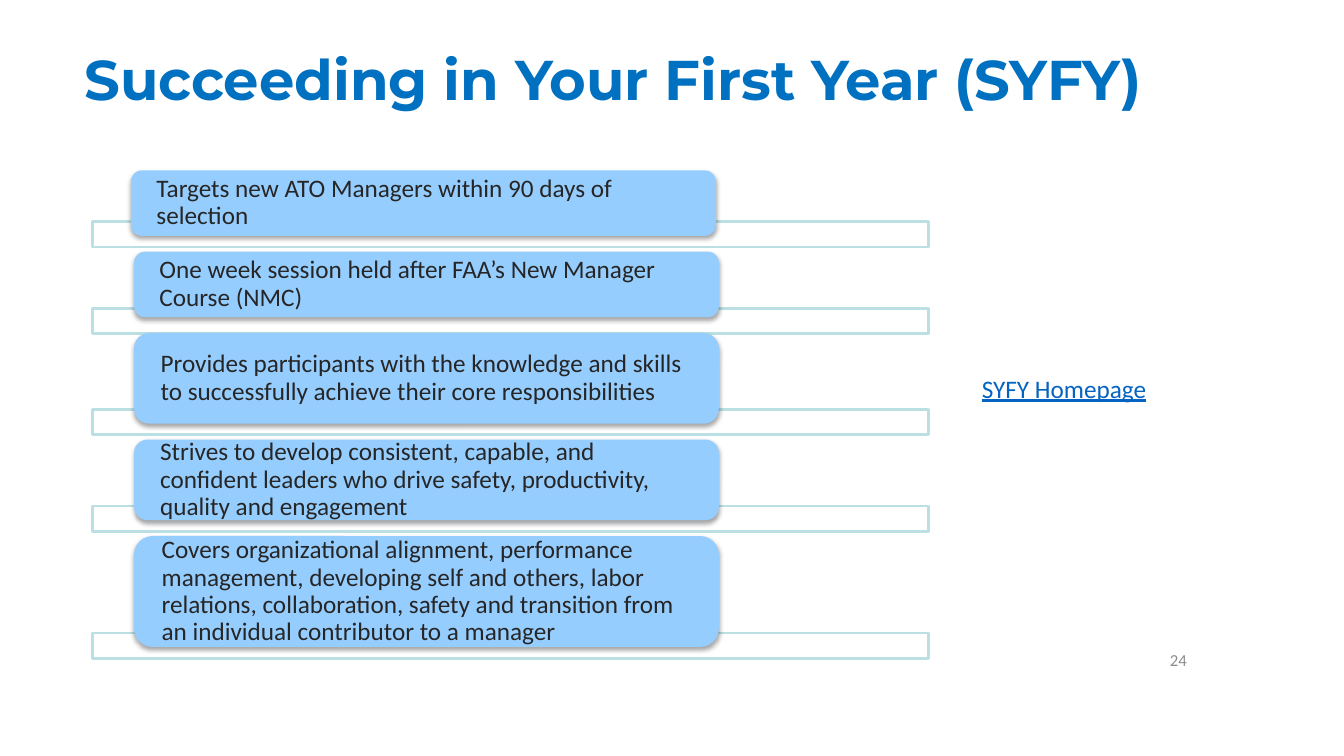
from dataclasses import dataclass

from lxml.etree import SubElement
from pptx import Presentation
from pptx.dml.color import RGBColor
from pptx.enum.shapes import MSO_SHAPE
from pptx.enum.text import MSO_ANCHOR, PP_ALIGN
from pptx.oxml.ns import qn
from pptx.shapes.autoshape import Shape
from pptx.slide import Slide
from pptx.util import Inches, Length, Pt

CELL = 0.1
CARD_TOP = 16.9
CARD_GAP = 1.57
CARD_WIDTH = 58
BAR_LEFT = 9.2
BAR_WIDTH = 82.9
BAR_HEIGHT = 2.5


@dataclass(frozen=True)
class Area:
    column: float
    row: float
    columns: float
    rows: float


@dataclass(frozen=True)
class Point:
    words: str
    rows: float
    bar_row: float
    column: float = 13.3


@dataclass(frozen=True)
class Label:
    words: str
    area: Area
    size: float
    color: str
    font: str = "Calibri"
    bold: bool = False
    underline: bool = False
    spacing: float = 1.0
    anchor: MSO_ANCHOR = MSO_ANCHOR.MIDDLE
    align: PP_ALIGN = PP_ALIGN.LEFT


POINTS = [
    Point("Targets new ATO Managers within 90 days of selection", 6.5, 22, 13),
    Point("One week session held after FAA’s New Manager Course (NMC)", 6.5, 30.6),
    Point("Provides participants with the knowledge and skills to successfully "
          "achieve their core responsibilities", 9, 40.6),
    Point("Strives to develop consistent, capable, and confident leaders who drive "
          "safety, productivity, quality and engagement", 8, 50.2),
    Point("Covers organizational alignment, performance management, developing self "
          "and others, labor relations, collaboration, safety and transition from "
          "an individual contributor to a manager", 11, 62.8),
]

LABELS = [
    Label("Succeeding in Your First Year (SYFY)", Area(7.4, 4, 115, 8.3), 40, "0070C0",
          font="Montserrat", bold=True, spacing=0.9),
    Label("SYFY Homepage", Area(96.4, 36.5, 18.4, 4), 18, "0563C1",
          underline=True, anchor=MSO_ANCHOR.TOP),
    Label("24", Area(94.2, 63.5, 24.5, 4), 12, "8C8C8C", align=PP_ALIGN.RIGHT),
]


def color(value: str) -> RGBColor:
    return RGBColor.from_string(value)


def place(area: Area) -> list[Length]:
    return [Inches(cells * CELL) for cells in (area.column, area.row, area.columns, area.rows)]


def write(box: Shape, label: Label) -> None:
    frame = box.text_frame
    frame.text = label.words
    frame.word_wrap = True
    frame.vertical_anchor = label.anchor
    para = frame.paragraphs[0]
    para.alignment = label.align
    para.line_spacing = label.spacing
    font = para.runs[0].font
    font.name = label.font
    font.size = Pt(label.size)
    font.bold = label.bold
    font.underline = label.underline
    font.color.rgb = color(label.color)


def add_block(page: Slide, kind: MSO_SHAPE, area: Area, fill: str) -> Shape:
    block = page.shapes.add_shape(kind, *place(area))
    block.shadow.inherit = False
    block.fill.solid()
    block.fill.fore_color.rgb = color(fill)
    block.line.fill.background()
    return block


def add_soft_shadow(block: Shape) -> None:
    effects = block.element.spPr.find(qn("a:effectLst"))
    shadow = SubElement(effects, qn("a:outerShdw"), blurRad=str(Pt(3.1)),
                        dist=str(Pt(1.8)), dir="5400000", rotWithShape="0")
    black = SubElement(shadow, qn("a:srgbClr"), val="000000")
    SubElement(black, qn("a:alpha"), val="35000")


def add_point(page: Slide, point: Point, row: float) -> None:
    bar = add_block(page, MSO_SHAPE.RECTANGLE,
                    Area(BAR_LEFT, point.bar_row, BAR_WIDTH, BAR_HEIGHT), "FFFFFF")
    bar.line.color.rgb = color("BBE0E3")
    bar.line.width = Pt(2)
    area = Area(point.column, row, CARD_WIDTH, point.rows)
    card = add_block(page, MSO_SHAPE.ROUNDED_RECTANGLE, area, "96CDFF")
    add_soft_shadow(card)
    frame = card.text_frame
    frame.margin_left = frame.margin_right = Inches(0.22)
    frame.margin_top = frame.margin_bottom = 0
    write(card, Label(point.words, area, 18, "262626", spacing=0.9))


def main() -> None:
    deck = Presentation()
    deck.slide_width = Inches(13.33)
    deck.slide_height = Inches(7.5)
    page = deck.slides.add_slide(deck.slide_layouts[6])
    row = CARD_TOP
    for point in POINTS:
        add_point(page, point, row)
        row += point.rows + CARD_GAP
    for label in LABELS:
        write(page.shapes.add_textbox(*place(label.area)), label)
    deck.save("out.pptx")


if __name__ == "__main__":
    main()
